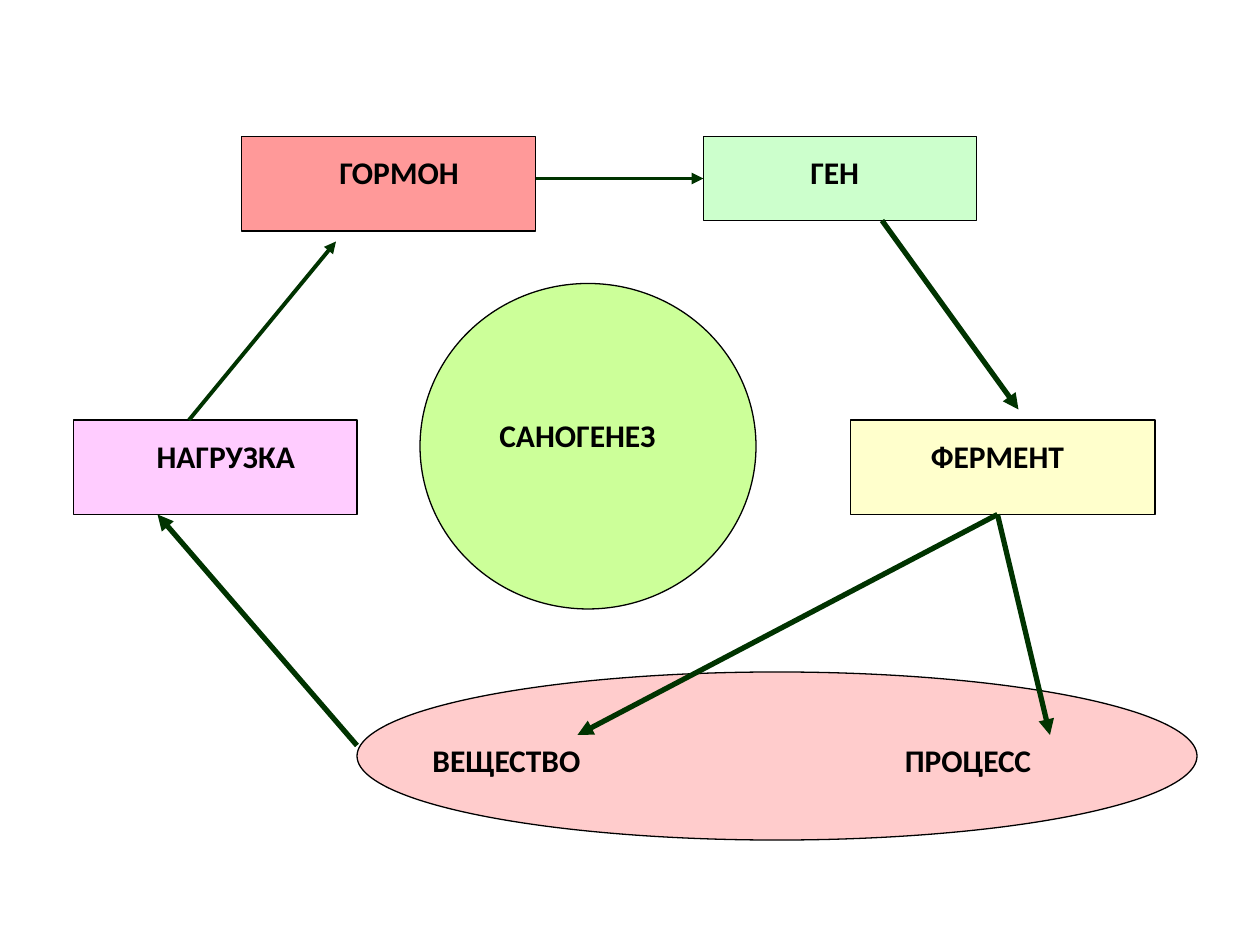
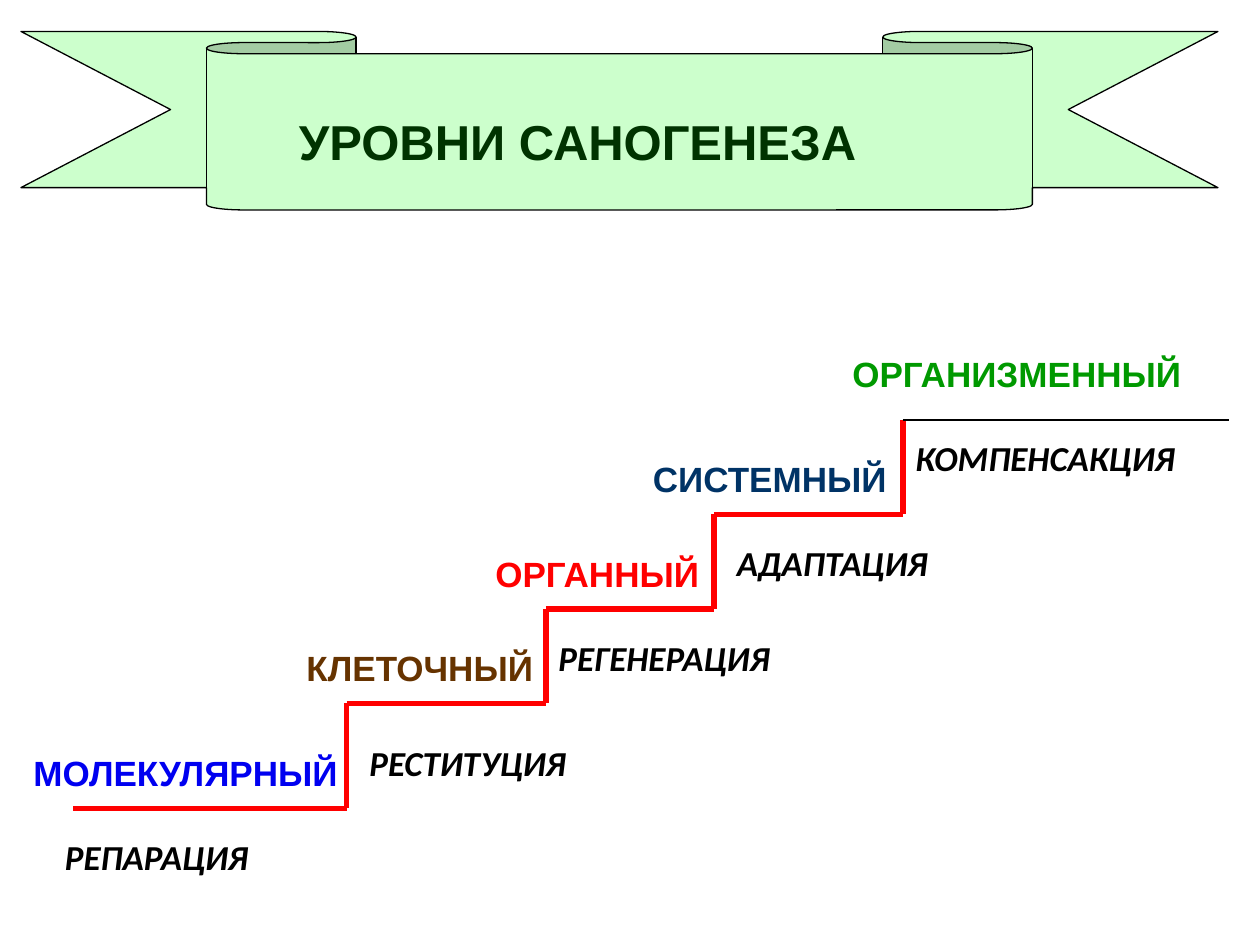
"""Build two slides on sanogenesis: its cycle and its levels."""
from dataclasses import dataclass
from itertools import pairwise

from lxml.etree import SubElement
from pptx import Presentation
from pptx.dml.color import RGBColor
from pptx.enum.shapes import MSO_CONNECTOR, MSO_SHAPE
from pptx.enum.text import MSO_AUTO_SIZE, PP_ALIGN
from pptx.oxml.ns import qn
from pptx.slide import Slide
from pptx.util import Pt

HUES = {
    "black": "000000", "lime": "CCFF99", "lilac": "FFCCFF", "coral": "FF9999",
    "mint": "CCFFCC", "cream": "FFFFCC", "pink": "FFCCCC", "pine": "003300",
    "red": "FF0000", "blue": "0000F0", "brown": "663300", "navy": "003366",
    "green": "009900",
}


@dataclass(frozen=True)
class Block:
    kind: MSO_SHAPE
    left: float
    top: float
    width: float
    height: float
    fill: str
    tweaks: tuple[float, ...] = ()


@dataclass(frozen=True)
class Label:
    text: str
    left: float
    top: float
    width: float
    hue: str = "black"
    font: str = "Calibri"
    size: float = 18
    slant: bool = False
    align: PP_ALIGN = PP_ALIGN.CENTER


@dataclass(frozen=True)
class Stroke:
    start: tuple[float, float]
    end: tuple[float, float]
    hue: str = "pine"
    weight: float = 3
    arrow: bool = True


def shade(name: str) -> RGBColor:
    return RGBColor.from_string(HUES[name])


def draw_block(slide: Slide, block: Block) -> None:
    box = (block.left, block.top, block.width, block.height)
    shape = slide.shapes.add_shape(block.kind, *map(Pt, box))
    for i, tweak in enumerate(block.tweaks):
        shape.adjustments[i] = tweak
    shape.shadow.inherit = False
    shape.fill.solid()
    shape.fill.fore_color.rgb = shade(block.fill)
    shape.line.color.rgb = shade("black")
    shape.line.width = Pt(0.75)


def draw_label(slide: Slide, label: Label) -> None:
    box = (label.left, label.top, label.width, label.size * 1.2 + 7.2)
    frame = slide.shapes.add_textbox(*map(Pt, box)).text_frame
    frame.word_wrap = True
    frame.auto_size = MSO_AUTO_SIZE.SHAPE_TO_FIT_TEXT
    line = frame.paragraphs[0]
    line.text = label.text
    line.alignment = label.align
    font = line.font
    font.name, font.size = label.font, Pt(label.size)
    font.bold, font.italic = True, label.slant
    font.color.rgb = shade(label.hue)


def draw_stroke(slide: Slide, stroke: Stroke) -> None:
    ends = map(Pt, stroke.start + stroke.end)
    link = slide.shapes.add_connector(MSO_CONNECTOR.STRAIGHT, *ends)
    link.line.color.rgb = shade(stroke.hue)
    link.line.width = Pt(stroke.weight)
    if stroke.arrow:
        SubElement(link.line._get_or_add_ln(), qn("a:tailEnd"), type="triangle")
    SubElement(link._element.spPr, qn("a:effectLst"))


BLOCKS = (
    Block(MSO_SHAPE.OVAL, 240, 162, 192, 186, "lime"),
    Block(MSO_SHAPE.RECTANGLE, 42, 240, 162, 54, "lilac"),
    Block(MSO_SHAPE.RECTANGLE, 138, 78, 168, 54, "coral"),
    Block(MSO_SHAPE.RECTANGLE, 402, 78, 156, 48, "mint"),
    Block(MSO_SHAPE.RECTANGLE, 486, 240, 174, 54, "cream"),
    Block(MSO_SHAPE.OVAL, 204, 384, 480, 96, "pink"),
)
NAMES = (
    Label("НАГРУЗКА", 48, 246, 162),
    Label("ГОРМОН", 162, 84, 132),
    Label("ГЕН", 426, 84, 102),
    Label("ФЕРМЕНТ", 498, 246, 144),
    Label("ВЕЩЕСТВО", 240, 420, 162, align=PP_ALIGN.LEFT),
    Label("ПРОЦЕСС", 510, 420, 144, align=PP_ALIGN.LEFT),
    Label("САНОГЕНЕЗ", 246, 234, 168),
)
ARROWS = (
    Stroke((108, 240), (192, 138), weight=2.25),
    Stroke((306, 102), (402, 102), weight=2.25),
    Stroke((504, 126), (582, 234)),
    Stroke((570, 294), (330, 420)),
    Stroke((570, 294), (600, 420)),
    Stroke((204, 426), (90, 294)),
)
BANNER = Block(MSO_SHAPE.DOWN_RIBBON, 12, 18, 684, 102, "mint", (0.125, 0.69))
TITLE = Label("УРОВНИ САНОГЕНЕЗА", 150, 60, 360, "pine", "Arial", 28)
EDGES = (42, 198, 312, 408, 516, 702)
TREADS = (462, 402, 348, 294, 240)
LEVELS = (
    ("МОЛЕКУЛЯРНЫЙ", 12, 426, 192, "blue"),
    ("КЛЕТОЧНЫЙ", 168, 366, 162, "brown"),
    ("ОРГАННЫЙ", 276, 312, 150, "red"),
    ("СИСТЕМНЫЙ", 366, 258, 180, "navy"),
    ("ОРГАНИЗМЕННЫЙ", 480, 198, 204, "green"),
)
REPAIRS = (
    ("РЕПАРАЦИЯ", 30, 474, 168),
    ("РЕСТИТУЦИЯ", 204, 420, 168),
    ("РЕГЕНЕРАЦИЯ", 312, 360, 168),
    ("АДАПТАЦИЯ", 414, 306, 144),
    ("КОМПЕНСАКЦИЯ", 516, 246, 204),
)


def draw_cycle(slide: Slide) -> None:
    for block in BLOCKS:
        draw_block(slide, block)
    for name in NAMES:
        draw_label(slide, name)
    for arrow in ARROWS:
        draw_stroke(slide, arrow)


def draw_stairs(slide: Slide) -> None:
    draw_block(slide, BANNER)
    draw_label(slide, TITLE)
    spots = [(x, y) for pair, y in zip(pairwise(EDGES), TREADS) for x in pair]
    *steps, top = pairwise(spots)
    for start, end in steps:
        draw_stroke(slide, Stroke(start, end, "red", arrow=False))
    draw_stroke(slide, Stroke(*top, "black", 0.75, False))
    for level in LEVELS:
        draw_label(slide, Label(*level, "Arial", 20, align=PP_ALIGN.LEFT))
    for repair in REPAIRS:
        draw_label(slide, Label(*repair, size=20, slant=True, align=PP_ALIGN.LEFT))


def main() -> None:
    deck = Presentation()
    deck.slide_width, deck.slide_height = Pt(720), Pt(540)
    for draw in (draw_cycle, draw_stairs):
        draw(deck.slides.add_slide(deck.slide_layouts[6]))
    deck.save("out.pptx")


if __name__ == "__main__":
    main()
